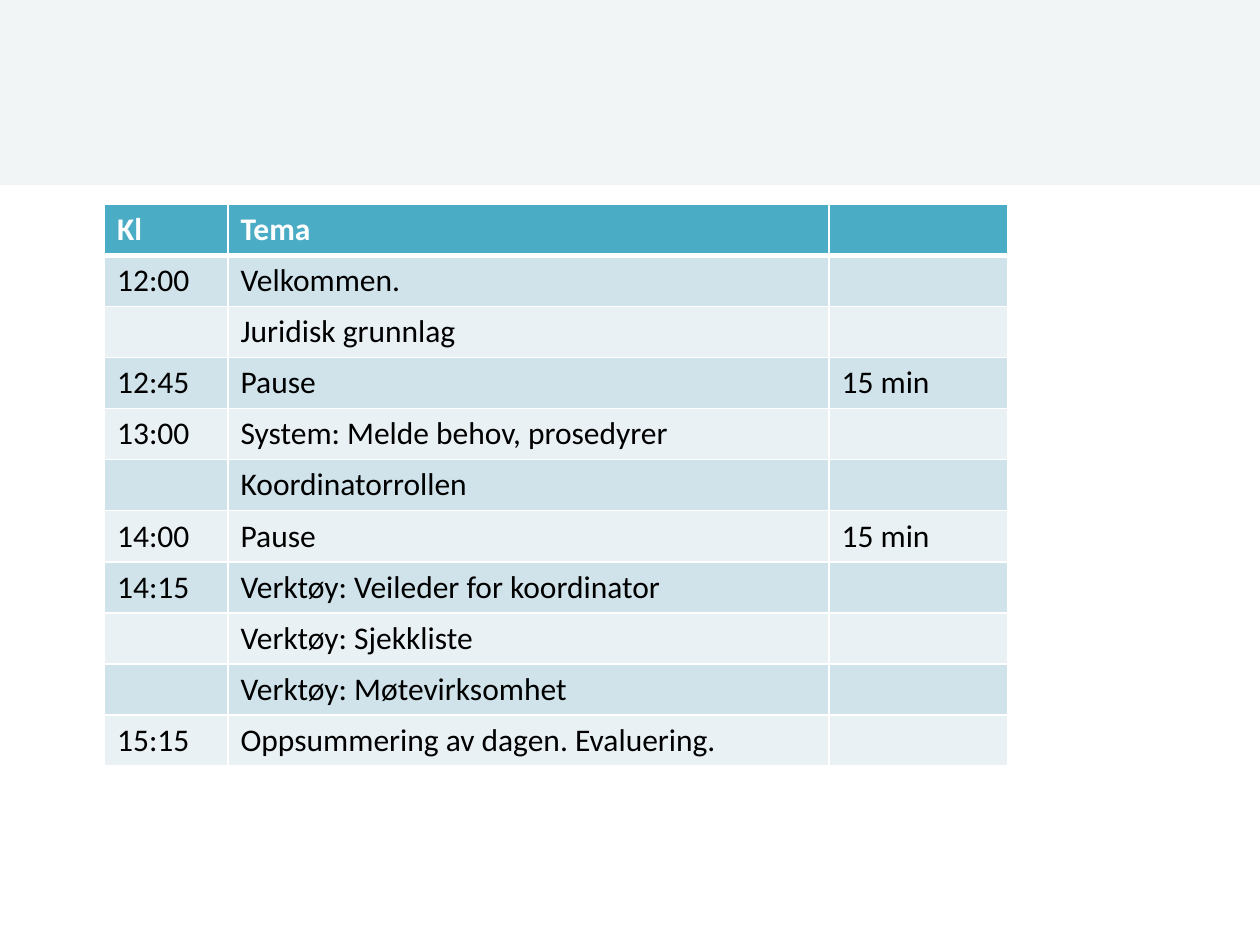
from lxml import etree
from pptx import Presentation
from pptx.dml.color import RGBColor
from pptx.enum.shapes import MSO_SHAPE
from pptx.oxml.ns import qn
from pptx.util import Inches, Pt

RECTANGLE = MSO_SHAPE.RECTANGLE

WHITE = RGBColor(0xFF, 0xFF, 0xFF)
BLACK = RGBColor(0x00, 0x00, 0x00)
BAND_GREY = RGBColor(0xF1, 0xF5, 0xF5)
HEADER_TEAL = RGBColor(0x4B, 0xAC, 0xC6)
ROW_DARK = RGBColor(0xD0, 0xE3, 0xEA)
ROW_LIGHT = RGBColor(0xE9, 0xF1, 0xF5)

FONT = "Calibri"
COLUMN_WIDTHS = (0.98, 4.77, 1.42)
AGENDA = [
    ("Kl", "Tema", ""),
    ("12:00", "Velkommen.", ""),
    ("", "Juridisk grunnlag", ""),
    ("12:45", "Pause", "15 min"),
    ("13:00", "System: Melde behov, prosedyrer", ""),
    ("", "Koordinatorrollen", ""),
    ("14:00", "Pause", "15 min"),
    ("14:15", "Verktøy: Veileder for koordinator", ""),
    ("", "Verktøy: Sjekkliste", ""),
    ("", "Verktøy: Møtevirksomhet", ""),
    ("15:15", "Oppsummering av dagen. Evaluering.", ""),
]


def add_title_band(page):
    band = page.shapes.add_shape(RECTANGLE, 0, 0, Inches(10), Inches(1.47))
    band.shadow.inherit = False
    band.fill.solid()
    band.fill.fore_color.rgb = BAND_GREY
    band.line.fill.background()


def set_borders(cell, top, bottom):
    """Draw white borders; top and bottom widths are in points."""
    properties = cell._tc.get_or_add_tcPr()
    for side, width in (("L", 1), ("R", 1), ("T", top), ("B", bottom)):
        border = etree.SubElement(properties, qn(f"a:ln{side}"), w=str(Pt(width)))
        fill = etree.SubElement(border, qn("a:solidFill"))
        etree.SubElement(fill, qn("a:srgbClr"), val=str(WHITE))


def write_cell(cell, text, color, bold):
    if not text:
        return
    span = cell.text_frame.paragraphs[0].add_run()
    span.text = text
    span.font.name = FONT
    span.font.size = Pt(18)
    span.font.bold = bold
    span.font.color.rgb = color


def add_agenda(page):
    frame = page.shapes.add_table(
        len(AGENDA), len(COLUMN_WIDTHS),
        Inches(0.83), Inches(1.62), Inches(sum(COLUMN_WIDTHS)), Inches(4.46))
    table = frame.table
    for column, width in zip(table.columns, COLUMN_WIDTHS):
        column.width = Inches(width)

    for row, texts in enumerate(AGENDA):
        header = row == 0
        if header:
            row_color = HEADER_TEAL
        else:
            row_color = ROW_DARK if row % 2 else ROW_LIGHT
        for column, text in enumerate(texts):
            cell = table.cell(row, column)
            # A thick rule separates the header from the first row
            set_borders(cell, top=3 if row == 1 else 1, bottom=3 if header else 1)
            cell.fill.solid()
            cell.fill.fore_color.rgb = row_color
            write_cell(cell, text, WHITE if header else BLACK, header)


def main():
    deck = Presentation()
    deck.slide_width = Inches(10)
    deck.slide_height = Inches(7.5)
    page = deck.slides.add_slide(deck.slide_layouts[6])
    page.background.fill.solid()
    page.background.fill.fore_color.rgb = WHITE

    add_title_band(page)
    add_agenda(page)
    deck.save("out.pptx")


if __name__ == "__main__":
    main()
